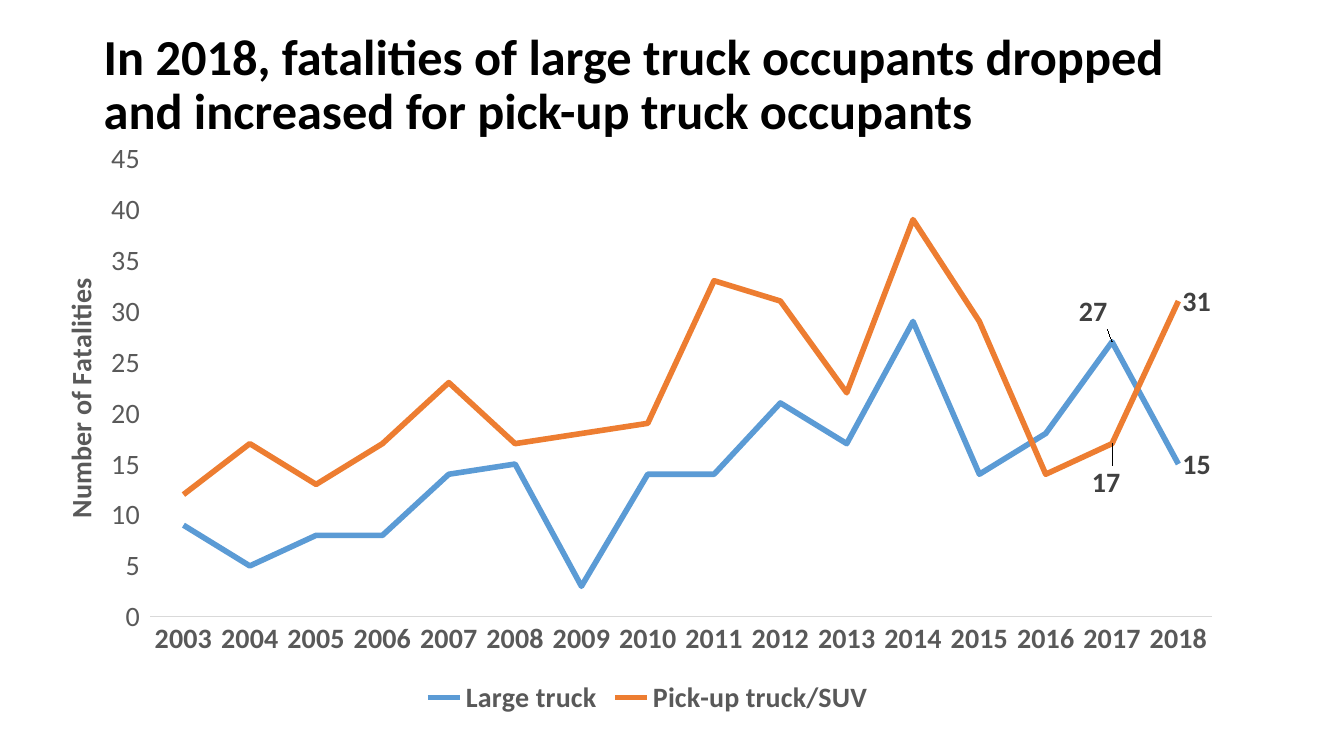
from dataclasses import dataclass

from lxml import etree
from pptx import Presentation
from pptx.chart.data import CategoryChartData
from pptx.dml.color import RGBColor
from pptx.enum.chart import (XL_CHART_TYPE, XL_LABEL_POSITION, XL_LEGEND_POSITION,
                             XL_MARKER_STYLE, XL_TICK_MARK)
from pptx.enum.text import MSO_ANCHOR, PP_ALIGN
from pptx.oxml.ns import qn
from pptx.util import Cm, Pt


@dataclass(frozen=True)
class Theme:
    font: str = "Calibri"
    title: str = "000000"
    axis: str = "595959"
    label: str = "404040"
    rule: str = "D9D9D9"
    large_truck: str = "5B9BD5"
    pickup: str = "ED7D31"
    title_size: int = 36
    chart_size: int = 20


THEME = Theme()
YEARS = [str(year) for year in range(2003, 2019)]
# name, colour, values, position and offset of the 2017 label
SERIES = [
    ("Large truck", THEME.large_truck,
     [9, 5, 8, 8, 14, 15, 3, 14, 14, 21, 17, 29, 14, 18, 27, 15],
     XL_LABEL_POSITION.ABOVE, (-0.016, -0.015)),
    ("Pick-up truck/SUV", THEME.pickup,
     [12, 17, 13, 17, 23, 17, 18, 19, 33, 31, 22, 39, 29, 14, 17, 31],
     XL_LABEL_POSITION.BELOW, (-0.005, 0.03)),
]


def style_font(font, size=THEME.chart_size, color=THEME.axis, bold=False):
    font.name = THEME.font
    font.size = Pt(size)
    font.bold = bold
    font.color.rgb = RGBColor.from_string(color)


def add_text(tf, text, align=PP_ALIGN.LEFT, spacing=None, **fmt):
    p = tf.paragraphs[0]
    p.alignment = align
    p.line_spacing = spacing
    r = p.add_run()
    r.text = text
    style_font(r.font, **fmt)


def manual_layout(**settings):
    layout = etree.Element(qn("c:layout"))
    manual = etree.SubElement(layout, qn("c:manualLayout"))
    for tag, value in settings.items():
        etree.SubElement(manual, qn(f"c:{tag}")).set("val", str(value))
    return layout


class Deck:
    def __init__(self, theme):
        self.theme = theme
        self.prs = Presentation()
        self.prs.slide_width, self.prs.slide_height = Cm(33.87), Cm(19.05)
        self.s = self.prs.slides.add_slide(self.prs.slide_layouts[5])

    def title(self, text, x, y, w, h):
        sp = self.s.shapes.title
        sp.left, sp.top, sp.width, sp.height = Cm(x), Cm(y), Cm(w), Cm(h)
        tf = sp.text_frame
        tf.word_wrap = True
        tf.vertical_anchor = MSO_ANCHOR.MIDDLE
        add_text(tf, text, spacing=0.9, size=self.theme.title_size,
                 color=self.theme.title, bold=True)

    def line_chart(self, years, series, axis_title, x, y, w, h):
        data = CategoryChartData()
        data.categories = years
        for name, _, values, _, _ in series:
            data.add_series(name, values)
        chart = self.s.shapes.add_chart(
            XL_CHART_TYPE.LINE, Cm(x), Cm(y), Cm(w), Cm(h), data).chart
        chart.has_title = False
        style_font(chart.font)

        # Legend
        chart.has_legend = True
        chart.legend.position = XL_LEGEND_POSITION.BOTTOM
        chart.legend.include_in_layout = False
        style_font(chart.legend.font, bold=True)

        # Plot area
        plot_area = chart.plots[0]._element.getparent()
        for old in plot_area.findall(qn("c:layout")):
            plot_area.remove(old)
        plot_area.insert(0, manual_layout(
            layoutTarget="inner", xMode="edge", yMode="edge",
            x=0.08, y=0.035, w=0.896, h=0.787))

        self.axes(chart, axis_title)
        for line, (_, color, _, position, offset) in zip(chart.plots[0].series, series):
            self.line(line, color, position, offset)

    def axes(self, chart, axis_title):
        cat, val = chart.category_axis, chart.value_axis
        for axis, bold in ((cat, True), (val, False)):
            axis.major_tick_mark = axis.minor_tick_mark = XL_TICK_MARK.NONE
            axis.has_major_gridlines = False
            style_font(axis.tick_labels.font, bold=bold)
        cat.format.line.color.rgb = RGBColor.from_string(self.theme.rule)
        cat.format.line.width = Pt(0.75)
        val.format.line.fill.background()
        val.minimum_scale, val.maximum_scale, val.major_unit = 0, 45, 5
        val.tick_labels.number_format = "_(* #,##0_)"
        val.tick_labels.number_format_is_linked = False
        tf = val.axis_title.text_frame
        add_text(tf, axis_title, align=PP_ALIGN.CENTER, bold=True)
        tf._txBody.bodyPr.set("rot", "-5400000")
        tf._txBody.bodyPr.set("vert", "horz")

    def line(self, line, color, position, offset):
        line.smooth = False
        line.marker.style = XL_MARKER_STYLE.NONE
        line.format.line.color.rgb = RGBColor.from_string(color)
        line.format.line.width = Pt(4)

        # Labels for the last two years only
        line.data_labels.show_value = False
        last = len(YEARS) - 1
        for idx, place in ((last - 1, position), (last, XL_LABEL_POSITION.RIGHT)):
            label = line.points[idx].data_label
            style_font(label.font, color=self.theme.label, bold=True)
            label.position = place
        idx_2017 = line._element.xpath(f"c:dLbls/c:dLbl/c:idx[@val='{last - 1}']")[0]
        idx_2017.addnext(manual_layout(x=offset[0], y=offset[1]))


def main():
    deck = Deck(THEME)
    deck.title("In 2018, fatalities of large truck occupants dropped "
               "and increased for pick-up truck occupants", 2.36, 0.66, 29.21, 3.02)
    deck.line_chart(YEARS, SERIES, "Number of Fatalities", 1.4, 3.48, 29.85, 14.68)
    deck.prs.save("out.pptx")


if __name__ == "__main__":
    main()
